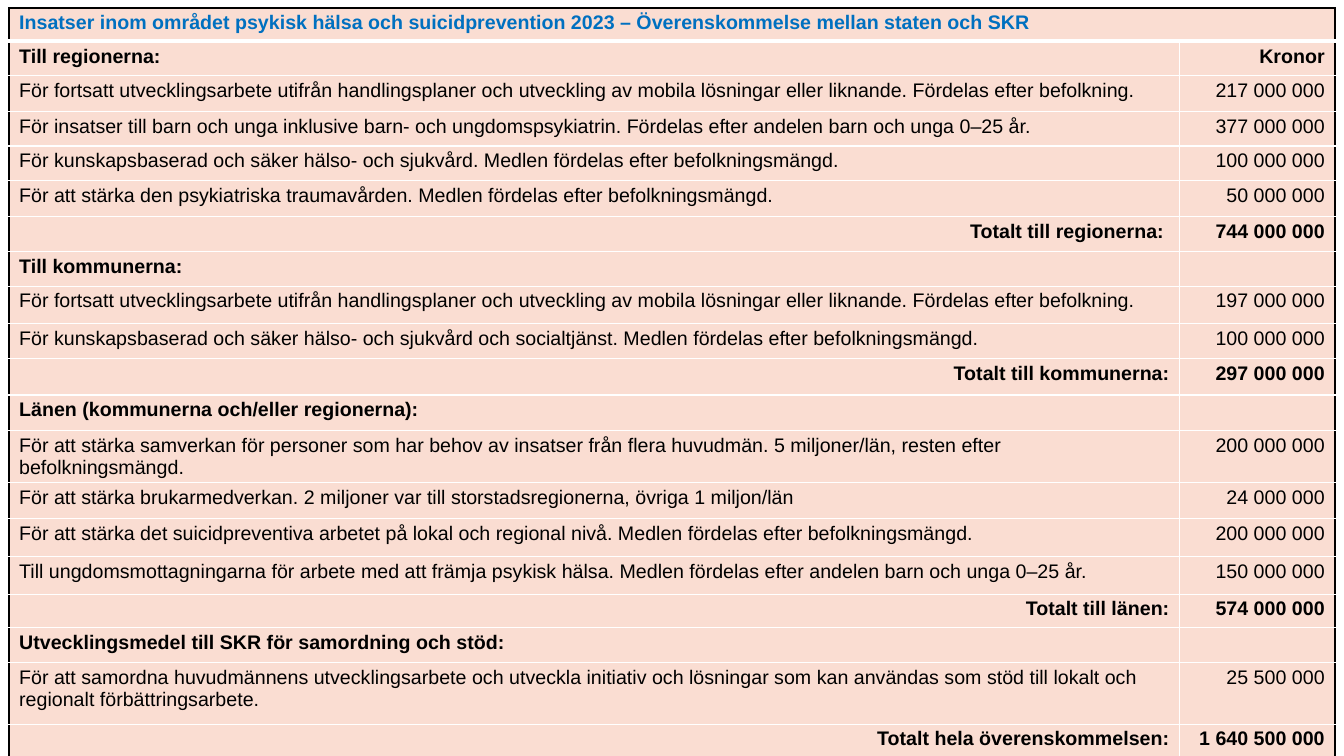
import pptx
import pptx.util
import pptx.dml.color
import pptx.enum.text
import lxml.etree
from pptx.oxml.ns import qn
from pptx.util import Inches, Pt

COLORS = {"blue": "0070C0", "black": "000000", "white": "FFFFFF", "rust": "E6460A"}
FONT = "Arial"
SIZE = 14
WIDTHS = [11.61, 1.54]
TITLE = ("Insatser inom området psykisk hälsa och suicidprevention 2023 – "
         "Överenskommelse mellan staten och SKR")
GROWTH = ("För fortsatt utvecklingsarbete utifrån handlingsplaner och utveckling av "
          "mobila lösningar eller liknande. Fördelas efter befolkning.")
ROWS = [
    ("title", TITLE, "", 0.33),
    ("head", "Till regionerna:", "Kronor", 0.34),
    ("item", GROWTH, "217 000 000", 0.36),
    ("item", "För insatser till barn och unga inklusive barn- och ungdomspsykiatrin. "
             "Fördelas efter andelen barn och unga 0–25 år.", "377 000 000", 0.34),
    ("item", "För kunskapsbaserad och säker hälso- och sjukvård. "
             "Medlen fördelas efter befolkningsmängd.", "100 000 000", 0.34),
    ("item", "För att stärka den psykiatriska traumavården. "
             "Medlen fördelas efter befolkningsmängd.", "50 000 000", 0.36),
    ("total", "Totalt till regionerna: ", "744 000 000", 0.35),
    ("head", "Till kommunerna:", "", 0.34),
    ("item", GROWTH, "197 000 000", 0.37),
    ("item", "För kunskapsbaserad och säker hälso- och sjukvård och socialtjänst. "
             "Medlen fördelas efter befolkningsmängd.", "100 000 000", 0.35),
    ("total", "Totalt till kommunerna:", "297 000 000", 0.36),
    ("head", "Länen (kommunerna och/eller regionerna):", "", 0.35),
    ("item", "För att stärka samverkan för personer som har behov av insatser från "
             "flera huvudmän. 5 miljoner/län, resten efter befolkningsmängd.",
     "200 000 000", 0.39),
    ("item", "För att stärka brukarmedverkan. 2 miljoner var till "
             "storstadsregionerna, övriga 1 miljon/län", "24 000 000", 0.36),
    ("item", "För att stärka det suicidpreventiva arbetet på lokal och regional nivå. "
             "Medlen fördelas efter befolkningsmängd.", "200 000 000", 0.38),
    ("item", "Till ungdomsmottagningarna för arbete med att främja psykisk hälsa. "
             "Medlen fördelas efter andelen barn och unga 0–25 år.", "150 000 000", 0.37),
    ("total", "Totalt till länen:", "574 000 000", 0.33),
    ("head", "Utvecklingsmedel till SKR för samordning och stöd:", "", 0.35),
    ("item", "För att samordna huvudmännens utvecklingsarbete och utveckla initiativ "
             "och lösningar som kan användas som stöd till lokalt och regionalt "
             "förbättringsarbete.", "25 500 000", 0.61),
    ("total", "Totalt hela överenskommelsen:", "1 640 500 000", 0.34),
]


def write(cell, text, color="black", bold=False, right=False):
    para = cell.text_frame.paragraphs[0]
    align = pptx.enum.text.PP_ALIGN
    para.alignment = align.RIGHT if right else align.LEFT
    if not text:
        lxml.etree.SubElement(para._p, qn("a:endParaRPr"), sz=str(SIZE * 100))
        return
    run = para.add_run()
    run.text = text
    run.font.name = FONT
    run.font.size = Pt(SIZE)
    run.font.bold = bold
    run.font.color.rgb = pptx.dml.color.RGBColor.from_string(COLORS[color])


def tint(cell, color, alpha):
    cell.fill.solid()
    cell.fill.fore_color.rgb = pptx.dml.color.RGBColor.from_string(COLORS[color])
    tone = cell._tc.tcPr.find(".//" + qn("a:srgbClr"))
    lxml.etree.SubElement(tone, qn("a:alpha"), val=str(alpha * 1000))


def edge(cell, sides):
    for spot, (side, (color, width)) in enumerate(sides.items()):
        line = lxml.etree.Element(qn("a:ln" + side), w=str(Pt(width)))
        fill = lxml.etree.SubElement(line, qn("a:solidFill"))
        lxml.etree.SubElement(fill, qn("a:srgbClr"), val=COLORS[color])
        cell._tc.tcPr.insert(spot, line)


def frame(row, col, last):
    thin, dark, thick = ("white", 1), ("black", 1), ("white", 3)
    return {
        "L": dark if col == 0 else thin,
        "R": dark if col == 1 or row == 0 else thin,
        "T": dark if row == 0 else thick if row == 1 else thin,
        "B": thick if row == 0 else dark if row == last else thin,
    }


def add_grid(slide):
    tall = sum(row[3] for row in ROWS)
    shape = slide.shapes.add_table(len(ROWS), 2, Inches(0.09), Inches(0.08),
                                   Inches(sum(WIDTHS)), Inches(tall))
    grid = shape.table
    grid.first_row = grid.horz_banding = False
    for col, width in enumerate(WIDTHS):
        grid.columns[col].width = Inches(width)
    for row, (kind, label, amount, height) in enumerate(ROWS):
        grid.rows[row].height = Inches(height)
        for col, text in enumerate((label, amount)):
            cell = grid.cell(row, col)
            cell.margin_left = cell.margin_right = Inches(0.1)
            cell.margin_top = cell.margin_bottom = Inches(0.04)
            write(cell, text, color="blue" if kind == "title" else "black",
                  bold=kind != "item", right=col == 1 or kind == "total")
            tint(cell, "rust", 18)
            edge(cell, frame(row, col, len(ROWS) - 1))
    grid.cell(0, 0).merge(grid.cell(0, 1))


def main():
    deck = pptx.Presentation()
    deck.slide_width = Inches(13.33)
    deck.slide_height = Inches(7.5)
    add_grid(deck.slides.add_slide(deck.slide_layouts[6]))
    deck.save("out.pptx")


if __name__ == "__main__":
    main()
